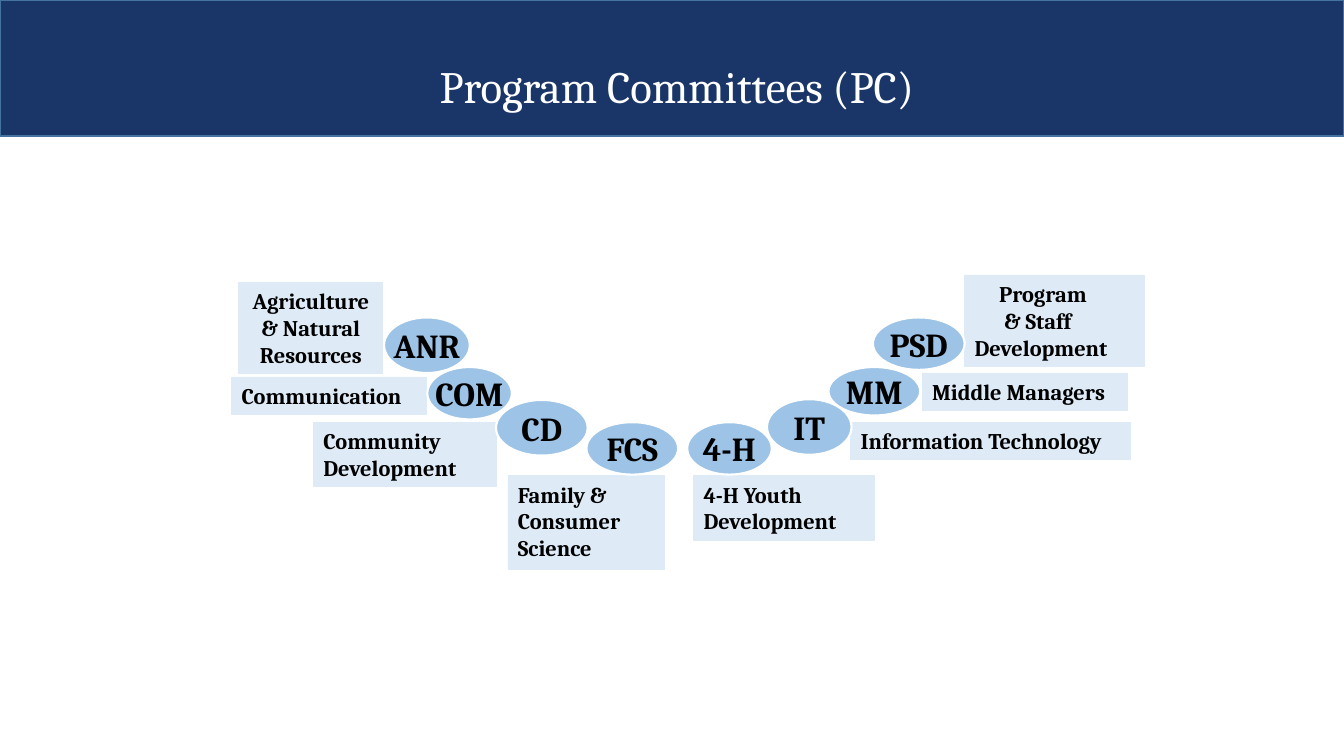
"""Build the Program Committees slide: a title band and an arc of committees with their full names."""
from pptx import Presentation
from pptx.dml.color import RGBColor
from pptx.enum.shapes import MSO_SHAPE as SHAPE
from pptx.enum.text import MSO_ANCHOR as ANCHOR, PP_ALIGN as ALIGN
from pptx.util import Cm, Pt

TITLE = "Program Committees (PC)"
TITLE_BOX = (6.12, 0.94, 21.89, 2.62)
SLIDE_SIZE = (33.87, 19.05)
BAND_HEIGHT = 3.43

# Each paragraph is (text, first-line indent).
LABELS = [
    ([("Communication", 0)], (5.84, 9.5, 4.9, 0.94), ALIGN.LEFT),
    ([("Community Development", 0)], (7.9, 10.64, 4.62, 1.63), ALIGN.LEFT),
    ([("Family & Consumer Science", 0)], (12.8, 11.99, 3.94, 2.36), ALIGN.LEFT),
    ([("4-H Youth Development", 0)], (17.48, 11.99, 4.55, 1.63), ALIGN.LEFT),
    ([("Information Technology", 0)], (21.44, 10.64, 7.06, 0.94), ALIGN.LEFT),
    ([("Middle Managers", 0)], (23.24, 9.4, 5.18, 0.94), ALIGN.LEFT),
    ([("Program", 0.62), ("& Staff Development", 0.75)], (24.31, 6.93, 4.52, 2.31), ALIGN.LEFT),
    ([("Agriculture & Natural Resources", 0)], (6.02, 7.11, 3.63, 2.31), ALIGN.CENTER),
]
COMMITTEES = [
    ("COM", (10.77, 9.25, 2.13, 1.32)),
    ("ANR", (9.68, 8.0, 2.16, 1.4)),
    ("CD", (12.5, 10.08, 2.31, 1.4)),
    ("FCS", (14.78, 10.64, 2.31, 1.32)),
    ("4-H", (17.32, 10.64, 2.13, 1.32)),
    ("MM", (20.88, 9.25, 2.31, 1.22)),
    ("PSD", (22.0, 8.0, 2.31, 1.32)),
    ("IT", (19.33, 10.06, 2.13, 1.4)),
]
THEME = {
    "band": {"fill": "1A3668", "line": "43739E", "width": 1},
    "label": {"fill": "DEEBF7", "line": "DEEBF7", "width": 0.5},
    "committee": {"fill": "9DC3E6", "line": "FFFFFF", "width": 1.5},
    "title_font": {"name": "Cambria", "size": Pt(32), "bold": False, "color": "FFFFFF"},
    "label_font": {"name": "Cambria", "size": Pt(16), "bold": True, "color": "000000"},
    "committee_font": {"name": "Cambria", "size": Pt(24), "bold": True, "color": "000000"},
}


def add_shape(s, kind, box, look):
    sp = s.shapes.add_shape(kind, *map(Cm, box))
    sp.shadow.inherit = False
    sp.fill.solid()
    sp.fill.fore_color.rgb = RGBColor.from_string(look["fill"])
    sp.line.color.rgb = RGBColor.from_string(look["line"])
    sp.line.width = Pt(look["width"])
    return sp


def write(sp, paragraphs, font, align, anchor, wrap=True, spacing=None):
    tf = sp.text_frame
    tf.word_wrap, tf.vertical_anchor = wrap, anchor
    for i, (text, indent) in enumerate(paragraphs):
        p = tf.add_paragraph() if i else tf.paragraphs[0]
        p.alignment, p.line_spacing = align, spacing
        if indent:
            p._p.get_or_add_pPr().set("indent", str(Cm(indent)))
        r = p.add_run()
        r.text = text
        for key, value in font.items():
            if key == "color":
                r.font.color.rgb = RGBColor.from_string(value)
            else:
                setattr(r.font, key, value)


def main():
    prs = Presentation()
    prs.slide_width, prs.slide_height = map(Cm, SLIDE_SIZE)
    s = prs.slides.add_slide(prs.slide_layouts[6])
    add_shape(s, SHAPE.RECTANGLE, (0, 0, SLIDE_SIZE[0], BAND_HEIGHT), THEME["band"])
    title = s.shapes.add_textbox(*map(Cm, TITLE_BOX))
    write(title, [(TITLE, 0)], THEME["title_font"], ALIGN.CENTER, ANCHOR.MIDDLE, spacing=0.9)
    for paragraphs, box, align in LABELS:
        sp = add_shape(s, SHAPE.RECTANGLE, box, THEME["label"])
        write(sp, paragraphs, THEME["label_font"], align, ANCHOR.TOP)
    for name, box in COMMITTEES:
        sp = add_shape(s, SHAPE.OVAL, box, THEME["committee"])
        write(sp, [(name, 0)], THEME["committee_font"], ALIGN.CENTER, ANCHOR.MIDDLE, wrap=False)
    prs.save("out.pptx")


if __name__ == "__main__":
    main()
